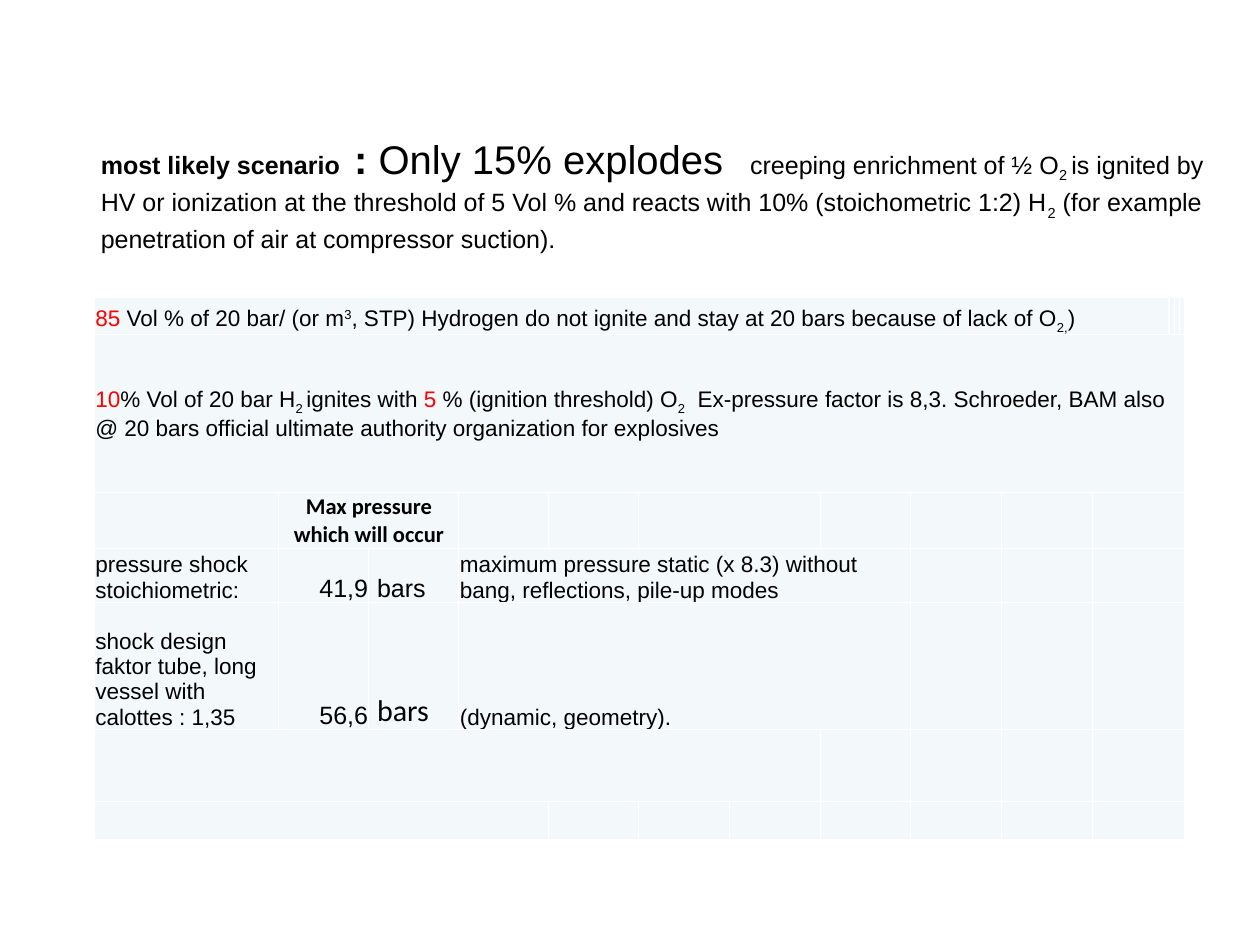
from pptx import Presentation
from pptx.dml.color import RGBColor
from pptx.enum.text import MSO_ANCHOR, PP_ALIGN
from pptx.oxml import parse_xml
from pptx.oxml.ns import nsdecls
from pptx.util import Inches, Pt

COLORS = {"text": "000000", "accent": "FF0000", "cell": "F3F9FA", "border": "FFFFFF"}
SUB, SUPER = -25000, 30000
COLUMN_WIDTHS = [2.05, 1, 1, 1, 1, 1.01, 1.01, 1, 1.01, 1.01, 0.85, 0.05, 0.05, 0.05]
ROW_HEIGHTS = [0.42, 1.75, 0.62, 0.57, 1.41, 0.8, 0.42]
MERGES = [
    {0: 11},
    {0: 14},
    {1: 2, 5: 2, 10: 4},
    {3: 5, 10: 4},
    {3: 5, 10: 4},
    {0: 7, 10: 4},
    {0: 4, 10: 4},
]
RED = {"color": "accent"}
LOW = {"baseline": SUB}
VALUE = {"size": 20}

TITLE = [
    ("most likely scenario  ", {"bold": True}),
    (":", {"bold": True, "size": 32}),
    (" Only 15% explodes", {"size": 32}),
    (" ", {"size": 36}),
    ("  creeping enrichment of ½ O", {}),
    ("2 ", LOW),
    ("is ignited by HV or ionization at the threshold of 5 Vol % and reacts "
     "with 10% (stoichometric 1:2) H", {}),
    ("2", LOW),
    (" (for example penetration of air at compressor suction).", {}),
]

CELLS = {
    (0, 0): ([
        ("85 ", RED),
        ("Vol % of 20 bar/ (or m", {}),
        ("3", {"baseline": SUPER}),
        (", STP) Hydrogen do not ignite and stay at 20 bars because of lack of O", {}),
        ("2,", LOW),
        (")", {}),
    ], {}),
    (1, 0): ([
        ("10", RED),
        ("% Vol of 20 bar H", {}),
        ("2 ", LOW),
        ("ignites with ", {}),
        ("5 ", RED),
        ("% (ignition threshold) O", {}),
        ("2", LOW),
        ("  Ex-pressure factor is 8,3. Schroeder, BAM also @ 20 bars "
         "official ultimate authority organization for explosives", {}),
    ], {"vertical_anchor": MSO_ANCHOR.MIDDLE}),
    (2, 1): ([("Max pressure which will occur", {"name": "Calibri", "bold": True})],
             {"alignment": PP_ALIGN.CENTER}),
    (3, 0): ([("pressure shock stoichiometric:", {})], {}),
    (3, 1): ([("41,9", VALUE)], {"alignment": PP_ALIGN.RIGHT}),
    (3, 2): ([("bars", VALUE)], {"margin_left": Inches(0.09)}),
    (3, 3): ([("maximum pressure static (x 8.3) without bang, reflections, "
               "pile-up modes", {})], {}),
    (4, 0): ([("shock design faktor tube, long vessel with calottes : 1,35", {})], {}),
    (4, 1): ([("56,6", VALUE)], {"alignment": PP_ALIGN.RIGHT}),
    (4, 2): ([("bars", {"size": 24, "name": "Calibri"})], {"margin_left": Inches(0.09)}),
    (4, 3): ([("(dynamic, geometry).", {})], {}),
}


def apply(target, values):
    for name, value in values.items():
        setattr(target, name, value)


class SlideBuilder:
    def __init__(self, slide):
        self.slide = slide
        self.font = {"name": "Arial", "bold": False}
        self.cell = {
            "margin_left": Inches(0.01), "margin_right": Inches(0.01),
            "margin_top": Inches(0.01), "margin_bottom": 0,
            "vertical_anchor": MSO_ANCHOR.BOTTOM,
        }

    def add_spans(self, para, spans, size):
        for text, changes in spans:
            style = {**self.font, "size": size, **changes}
            color = style.pop("color", "text")
            baseline = style.pop("baseline", 0)
            style["size"] = Pt(style["size"])
            span = para.add_run()
            span.text = text
            apply(span.font, style)
            span.font.color.rgb = RGBColor.from_string(COLORS[color])
            if baseline:
                span._r.get_or_add_rPr().set("baseline", str(baseline))

    def add_title(self, spans, left, top, width, height):
        box = self.slide.shapes.add_textbox(
            Inches(left), Inches(top), Inches(width), Inches(height))
        apply(box.text_frame, {
            "word_wrap": True, "vertical_anchor": MSO_ANCHOR.MIDDLE,
            "margin_left": Inches(0.14), "margin_right": Inches(0.14),
            "margin_top": Inches(0.22), "margin_bottom": Inches(0.07),
        })
        para = box.text_frame.paragraphs[0]
        para.line_spacing = 1.1
        self.add_spans(para, spans, 20)

    def style_cell(self, cell):
        apply(cell, self.cell)
        properties = cell._tc.get_or_add_tcPr()
        for side in "LRTB":
            properties.append(parse_xml(
                f'<a:ln{side} {nsdecls("a")} w="12700"><a:solidFill>'
                f'<a:srgbClr val="{COLORS["border"]}"/></a:solidFill></a:ln{side}>'))
        cell.fill.solid()
        cell.fill.fore_color.rgb = RGBColor.from_string(COLORS["cell"])

    def add_table(self, left, top):
        table = self.slide.shapes.add_table(
            len(ROW_HEIGHTS), len(COLUMN_WIDTHS), Inches(left), Inches(top),
            Inches(sum(COLUMN_WIDTHS)), Inches(sum(ROW_HEIGHTS))).table
        apply(table, {"first_row": False, "horz_banding": False})
        for column, width in zip(table.columns, COLUMN_WIDTHS):
            column.width = Inches(width)
        for row, height in zip(table.rows, ROW_HEIGHTS):
            row.height = Inches(height)
        for cell in table.iter_cells():
            self.style_cell(cell)
        for row, merges in enumerate(MERGES):
            for column, count in merges.items():
                table.cell(row, column).merge(table.cell(row, column + count - 1))
        for position, (spans, changes) in CELLS.items():
            cell = table.cell(*position)
            para = cell.text_frame.paragraphs[0]
            for name, value in changes.items():
                setattr(para if name == "alignment" else cell, name, value)
            self.add_spans(para, spans, 18)


def main():
    deck = Presentation()
    apply(deck, {"slide_width": Inches(14), "slide_height": Inches(10.5)})
    page = SlideBuilder(deck.slides.add_slide(deck.slide_layouts[6]))
    page.add_title(TITLE, 0.98, 1.16, 12.56, 1.73)
    page.add_table(1.05, 3.3)
    deck.save("out.pptx")


if __name__ == "__main__":
    main()
